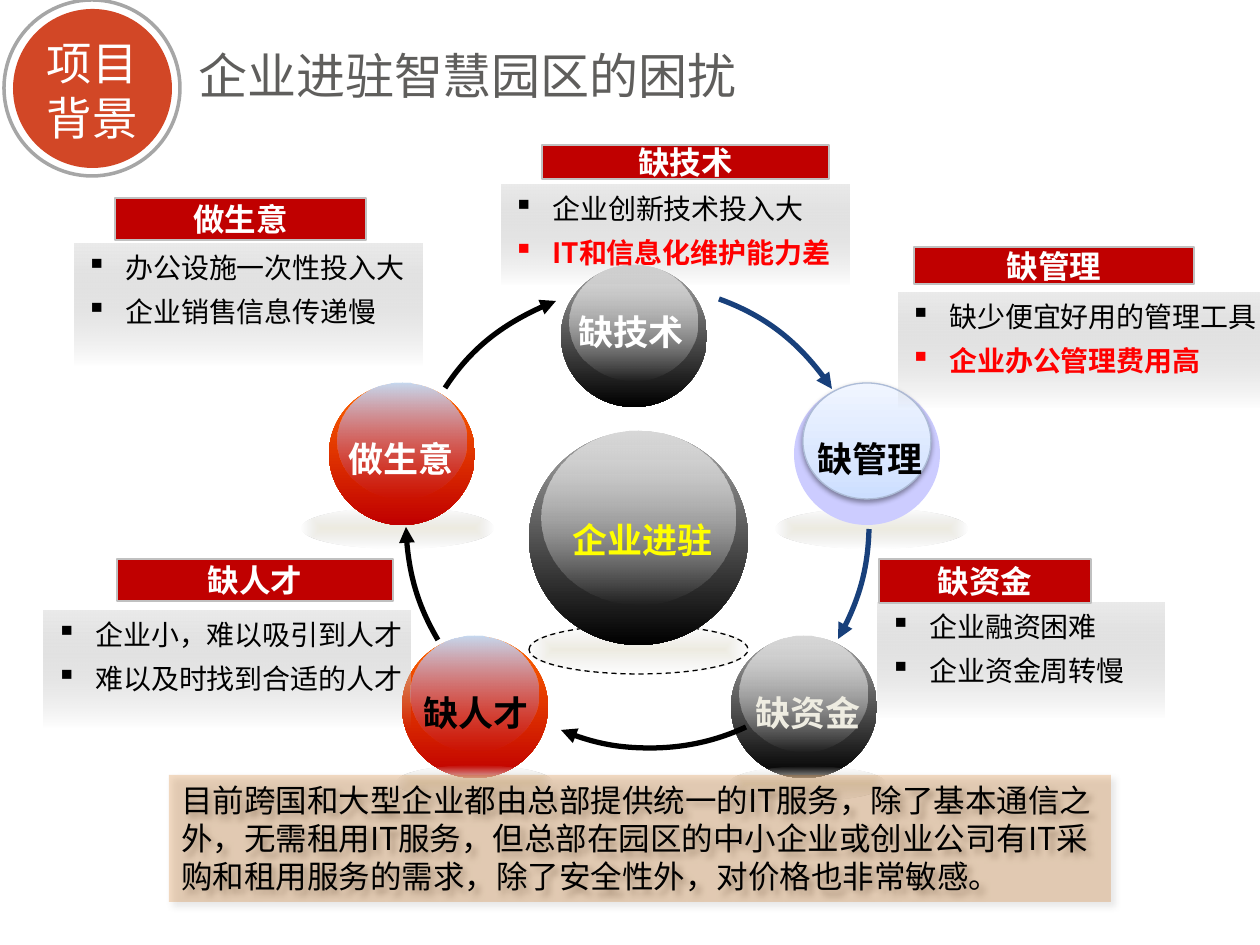
"""Build the slide on the troubles of companies moving into a smart park."""
from typing import NamedTuple, Optional, Union

from lxml.etree import SubElement
from pptx import Presentation
from pptx.dml.color import RGBColor
from pptx.enum.dml import MSO_LINE
from pptx.enum.shapes import MSO_SHAPE
from pptx.enum.text import MSO_ANCHOR, PP_ALIGN
from pptx.oxml.ns import qn
from pptx.util import Emu, Pt

SCALE = 914400 / 126
FONT = "Noto Sans CJK SC"
BLACK = RGBColor(0, 0, 0)
WHITE = RGBColor(255, 255, 255)
RED = RGBColor(255, 0, 0)
DARK_RED = RGBColor(0xC0, 0, 0)
YELLOW = RGBColor(255, 255, 0)
CREAM = RGBColor(0xEE, 0xEC, 0xE1)
SILVER = RGBColor(0xC0, 0xC0, 0xC0)
GREY = RGBColor(0xA6, 0xA6, 0xA6)
LAVENDER = RGBColor(0xCC, 0xCC, 0xFF)
RIM = RGBColor(0xAD, 0xBC, 0xD7)
NAVY = RGBColor(0x18, 0x40, 0x7B)
BROWN = RGBColor(0xCC, 0x66, 0)
BADGE_RED = RGBColor(0xD2, 0x47, 0x26)
TITLE_GREY = RGBColor(0x5F, 0x5E, 0x5C)


class Box(NamedTuple):
    left: int
    top: int
    width: int
    height: int


class Stop(NamedTuple):
    position: int
    color: str
    alpha: int = 100


class Gradient(NamedTuple):
    stops: tuple
    angle: Optional[int] = 90


class Line(NamedTuple):
    text: str
    color: RGBColor = BLACK
    bold: bool = False


class Shadow(NamedTuple):
    alpha: int
    blur: float
    distance: float
    angle: int


class Sphere(NamedTuple):
    box: Box
    body: Union[Gradient, RGBColor]
    gloss: Gradient
    label: Line
    label_left: int
    label_top: int


class Topic(NamedTuple):
    title: str
    tag: Box
    panel: Box
    lines: tuple


class Arrow(NamedTuple):
    color: RGBColor
    points: tuple


PANEL_FILL = Gradient((Stop(0, "EAEAEA"), Stop(100, "A7A7A7", 0)))
HALO_FILL = Gradient((Stop(0, "EEECE1"), Stop(100, "DDDDDD", 0)), None)
CENTER_HALO_FILL = Gradient((Stop(0, "EEECE1"), Stop(100, "EAEAEA", 0)), None)
DARK_BODY = Gradient((Stop(0, "A6A6A6"), Stop(100, "000000")))
DARK_GLOSS = Gradient((Stop(0, "D9D9D9"), Stop(100, "F2F2F2", 0)))
HOT_BODY = Gradient((Stop(0, "FF6600"), Stop(100, "C00000")))
HOT_GLOSS = Gradient((Stop(0, "C6D9F1"), Stop(100, "BB3783", 0)))
PALE_GLOSS = Gradient((Stop(0, "CCDEFF"), Stop(35, "DAE7FF"), Stop(100, "F0F5FF")), 270)

BACK_HALOS = (Box(302, 508, 192, 40), Box(776, 509, 192, 40))
FRONT_HALOS = (Box(397, 766, 155, 33), Box(730, 767, 155, 33))
SPHERES = (
    Sphere(Box(561, 265, 146, 142), DARK_BODY, DARK_GLOSS, Line("缺技术", WHITE, True), 530, 304),
    Sphere(Box(402, 636, 146, 142), HOT_BODY, HOT_GLOSS, Line("缺人才", BLACK, True), 375, 685),
    Sphere(Box(731, 636, 146, 142), DARK_BODY, DARK_GLOSS, Line("缺资金", CREAM, True), 707, 685),
    Sphere(Box(529, 431, 219, 214), DARK_BODY, DARK_GLOSS, Line("企业进驻", YELLOW, True), 541, 512),
    Sphere(Box(329, 383, 146, 142), HOT_BODY, HOT_GLOSS, Line("做生意", WHITE, True), 300, 431),
    Sphere(Box(794, 383, 146, 142), LAVENDER, PALE_GLOSS, Line("缺管理", BLACK, True), 769, 431),
)
ARROWS = (
    Arrow(BLACK, ((445, 388), (471, 348), (510, 319), (556, 301))),
    Arrow(BLACK, ((438, 640), (418, 606), (407, 567), (406, 527))),
    Arrow(BLACK, ((746, 727), (716, 741), (684, 748), (650, 748), (620, 748), (588, 742), (561, 730))),
    Arrow(NAVY, ((869, 529), (868, 568), (857, 606), (838, 639))),
    Arrow(NAVY, ((719, 299), (766, 316), (805, 348), (832, 389))),
)
TOPICS = (
    Topic("做生意", Box(115, 198, 251, 42), Box(74, 244, 348, 122),
          (Line("办公设施一次性投入大"), Line("企业销售信息传递慢"))),
    Topic("缺管理", Box(914, 247, 280, 37), Box(898, 293, 362, 115),
          (Line("缺少便宜好用的管理工具"), Line("企业办公管理费用高", RED, True))),
    Topic("缺资金", Box(879, 559, 212, 44), Box(878, 603, 287, 115),
          (Line("企业融资困难"), Line("企业资金周转慢"))),
    Topic("缺人才", Box(117, 559, 276, 42), Box(44, 611, 367, 117),
          (Line("企业小，难以吸引到人才"), Line("难以及时找到合适的人才"))),
    Topic("缺技术", Box(542, 145, 287, 34), Box(501, 185, 348, 100),
          (Line("企业创新技术投入大"), Line("IT和信息化维护能力差", RED, True))),
)
CONCLUSION = (
    "目前跨国和大型企业都由总部提供统一的IT服务，除了基本通信之外，无需租用IT服务，"
    "但总部在园区的中小企业或创业公司有IT采购和租用服务的需求，除了安全性外，对价格也非常敏感。"
)


def emu(box: Box) -> list:
    """Turn a box in px into EMU lengths."""
    return [Emu(round(length * SCALE)) for length in box]


def paint(shape, fill: Union[Gradient, RGBColor]) -> None:
    """Fill a shape with a colour or a gradient."""
    if isinstance(fill, RGBColor):
        shape.fill.solid()
        shape.fill.fore_color.rgb = fill
        return
    shape.fill.gradient()
    element = shape._element.spPr.find(qn("a:gradFill"))
    for child in list(element):
        element.remove(child)
    stops = SubElement(element, qn("a:gsLst"))
    for stop in fill.stops:
        entry = SubElement(stops, qn("a:gs"), pos=str(stop.position * 1000))
        color = SubElement(entry, qn("a:srgbClr"), val=stop.color)
        SubElement(color, qn("a:alpha"), val=str(stop.alpha * 1000))
    if fill.angle is None:
        center = SubElement(element, qn("a:path"), path="shape")
        SubElement(center, qn("a:fillToRect"), l="50000", t="50000", r="50000", b="50000")
    else:
        SubElement(element, qn("a:lin"), ang=str(fill.angle * 60000), scaled="0")


def add_block(shapes, preset, box: Box, fill, line: Optional[RGBColor] = None, width: float = 0.75):
    """Add a preset shape without a shadow."""
    shape = shapes.add_shape(preset, *emu(box))
    shape.shadow.inherit = False
    paint(shape, fill)
    if line is None:
        shape.line.fill.background()
    else:
        shape.line.color.rgb = line
        shape.line.width = Pt(width)
    return shape


def cast(shape, shadow: Shadow) -> None:
    """Give a shape an outer shadow."""
    effects = shape._element.spPr.find(qn("a:effectLst"))
    outer = SubElement(effects, qn("a:outerShdw"), blurRad=str(Pt(shadow.blur)), dist=str(Pt(shadow.distance)),
                       dir=str(shadow.angle * 60000), algn="ctr", rotWithShape="0")
    color = SubElement(outer, qn("a:srgbClr"), val="000000")
    SubElement(color, qn("a:alpha"), val=str(shadow.alpha * 1000))


def write(shape, lines, size: int, align=PP_ALIGN.CENTER, wrap=True, anchor=MSO_ANCHOR.TOP, bullet="") -> None:
    """Write one paragraph per line of text."""
    frame = shape.text_frame
    frame.word_wrap = wrap
    frame.vertical_anchor = anchor
    for index, line in enumerate(lines):
        paragraph = frame.paragraphs[0] if index == 0 else frame.add_paragraph()
        paragraph.alignment = align
        if bullet:
            paragraph.space_after = Pt(6)
            properties = paragraph._p.get_or_add_pPr()
            indent = round(39 * SCALE)
            properties.set("marL", str(indent))
            properties.set("indent", str(-indent))
            SubElement(properties, qn("a:buChar"), char=bullet)
        run = paragraph.add_run()
        run.text = line.text
        for name, value in {"name": FONT, "size": Pt(size), "bold": line.bold}.items():
            setattr(run.font, name, value)
        run.font.color.rgb = line.color
        SubElement(run._r.get_or_add_rPr(), qn("a:ea"), typeface=FONT)


def add_sphere(shapes, sphere: Sphere) -> None:
    """Add a ball with a gloss on its upper part."""
    left, top, width, height = sphere.box
    add_block(shapes, MSO_SHAPE.OVAL, sphere.box, sphere.body)
    gloss_box = Box(left + round(width * 0.06), top, round(width * 0.88), round(height * 0.815))
    pale = sphere.gloss is PALE_GLOSS
    gloss = add_block(shapes, MSO_SHAPE.OVAL, gloss_box, sphere.gloss, RIM if pale else None)
    if pale:
        cast(gloss, Shadow(38, 3.1, 1.6, 90))


def add_arrow(shapes, arrow: Arrow) -> None:
    """Add a curved arrow through Bezier points."""
    builder = shapes.build_freeform(*arrow.points[0], scale=SCALE)
    builder.add_line_segments(arrow.points[1:], close=False)
    shape = builder.convert_to_shape()
    shape.shadow.inherit = False
    shape.fill.background()
    shape.line.color.rgb = arrow.color
    shape.line.width = Pt(3)
    SubElement(shape._element.spPr.find(qn("a:ln")), qn("a:tailEnd"), type="triangle")
    path = next(shape._element.iter(qn("a:path")))
    path.set("fill", "none")
    for index, segment in enumerate(path.findall(qn("a:lnTo"))):
        if index % 3 == 0:
            curve = SubElement(path, qn("a:cubicBezTo"))
        curve.append(segment[0])
        path.remove(segment)


def add_topic(shapes, topic: Topic) -> None:
    """Add a bulleted panel and its red tag."""
    panel = add_block(shapes, MSO_SHAPE.RECTANGLE, topic.panel, PANEL_FILL)
    write(panel, topic.lines, 16, PP_ALIGN.LEFT, wrap=False, bullet="▪")
    tag = add_block(shapes, MSO_SHAPE.RECTANGLE, topic.tag, DARK_RED, SILVER)
    write(tag, [Line(topic.title, WHITE, True)], 18, wrap=False, anchor=MSO_ANCHOR.MIDDLE)


def main() -> None:
    """Draw the slide and save it."""
    presentation = Presentation()
    presentation.slide_width, presentation.slide_height = emu((1260, 945))
    shapes = presentation.slides.add_slide(presentation.slide_layouts[6]).shapes

    center_halo = add_block(shapes, MSO_SHAPE.OVAL, Box(529, 625, 219, 49), CENTER_HALO_FILL, BLACK)
    center_halo.line.dash_style = MSO_LINE.DASH
    for box in BACK_HALOS:
        add_block(shapes, MSO_SHAPE.OVAL, box, HALO_FILL)
    for sphere in SPHERES:
        add_sphere(shapes, sphere)
    for box in FRONT_HALOS:
        add_block(shapes, MSO_SHAPE.OVAL, box, HALO_FILL)
    for arrow in ARROWS:
        add_arrow(shapes, arrow)
    for sphere in SPHERES:
        label = shapes.add_textbox(*emu(Box(sphere.label_left, sphere.label_top, 203, 55)))
        write(label, [sphere.label], 20)
    for topic in TOPICS:
        add_topic(shapes, topic)

    conclusion = add_block(shapes, MSO_SHAPE.RECTANGLE, Box(169, 775, 942, 127), BROWN)
    color = conclusion._element.spPr.find(qn("a:solidFill"))[0]
    SubElement(color, qn("a:alpha"), val="23000")
    cast(conclusion, Shadow(40, 4, 3, 45))
    write(conclusion, [Line(CONCLUSION)], 18, PP_ALIGN.LEFT)

    badge = shapes.add_group_shape().shapes
    add_block(badge, MSO_SHAPE.OVAL, Box(4, 0, 176, 176), WHITE, GREY, 2)
    add_block(badge, MSO_SHAPE.OVAL, Box(13, 9, 159, 159), BADGE_RED)
    badge_text = badge.add_textbox(*emu(Box(34, 29, 117, 123)))
    write(badge_text, [Line("项目", WHITE), Line("背景", WHITE)], 26, wrap=False)
    title = shapes.add_textbox(*emu(Box(186, 39, 881, 72)))
    write(title, [Line("企业进驻智慧园区的困扰", TITLE_GREY)], 28, PP_ALIGN.LEFT)
    presentation.save("out.pptx")


if __name__ == "__main__":
    main()
